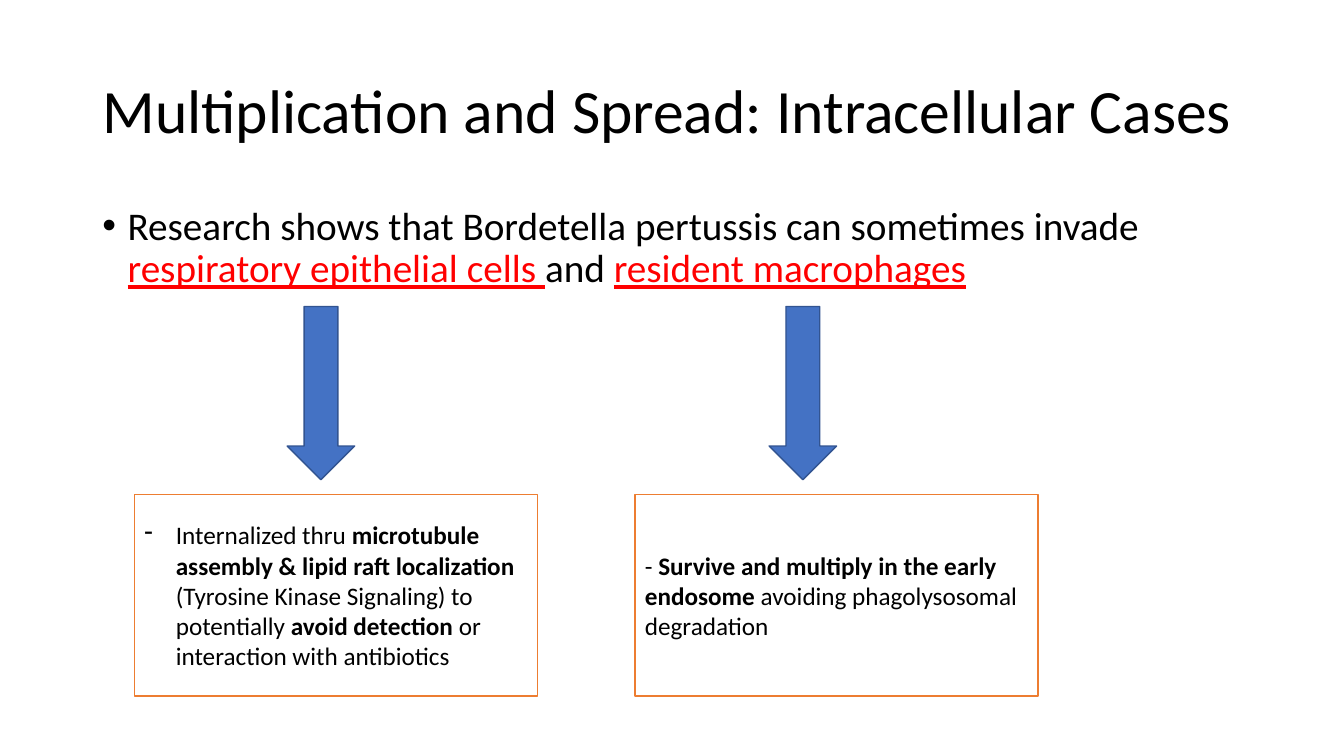
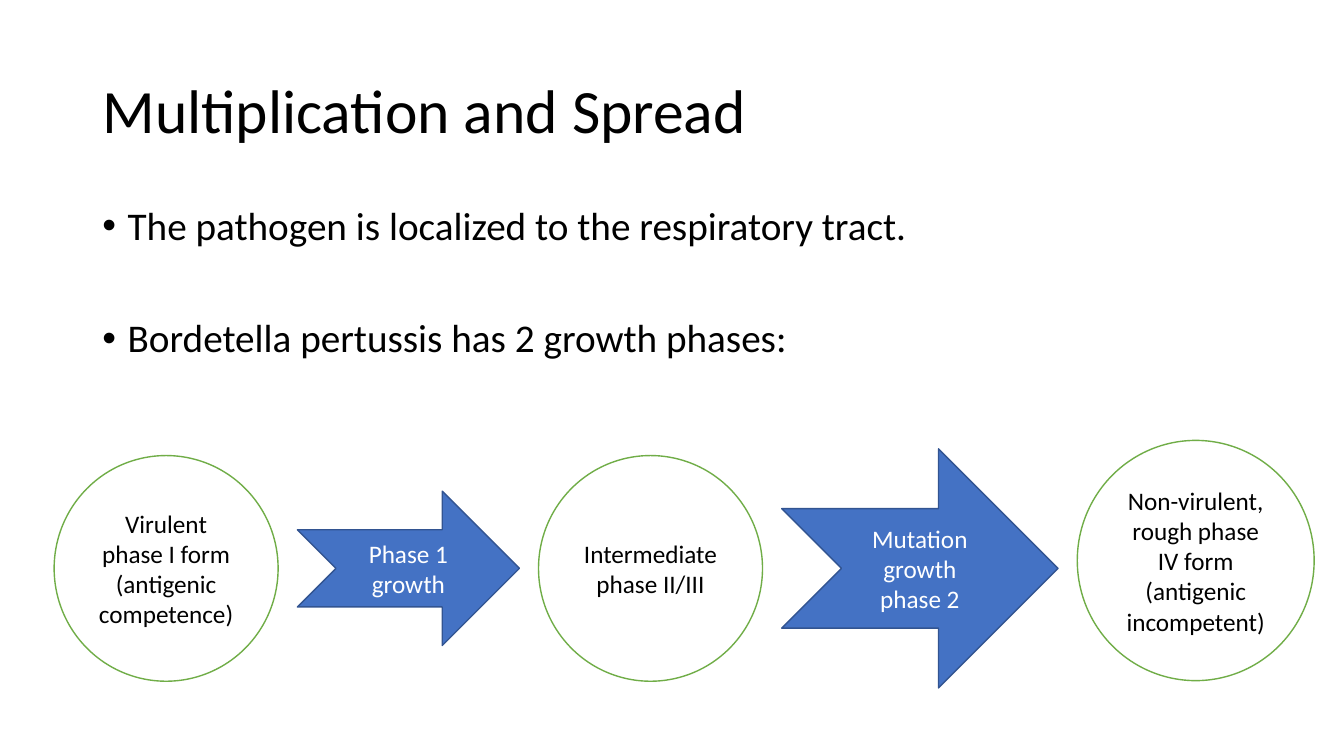
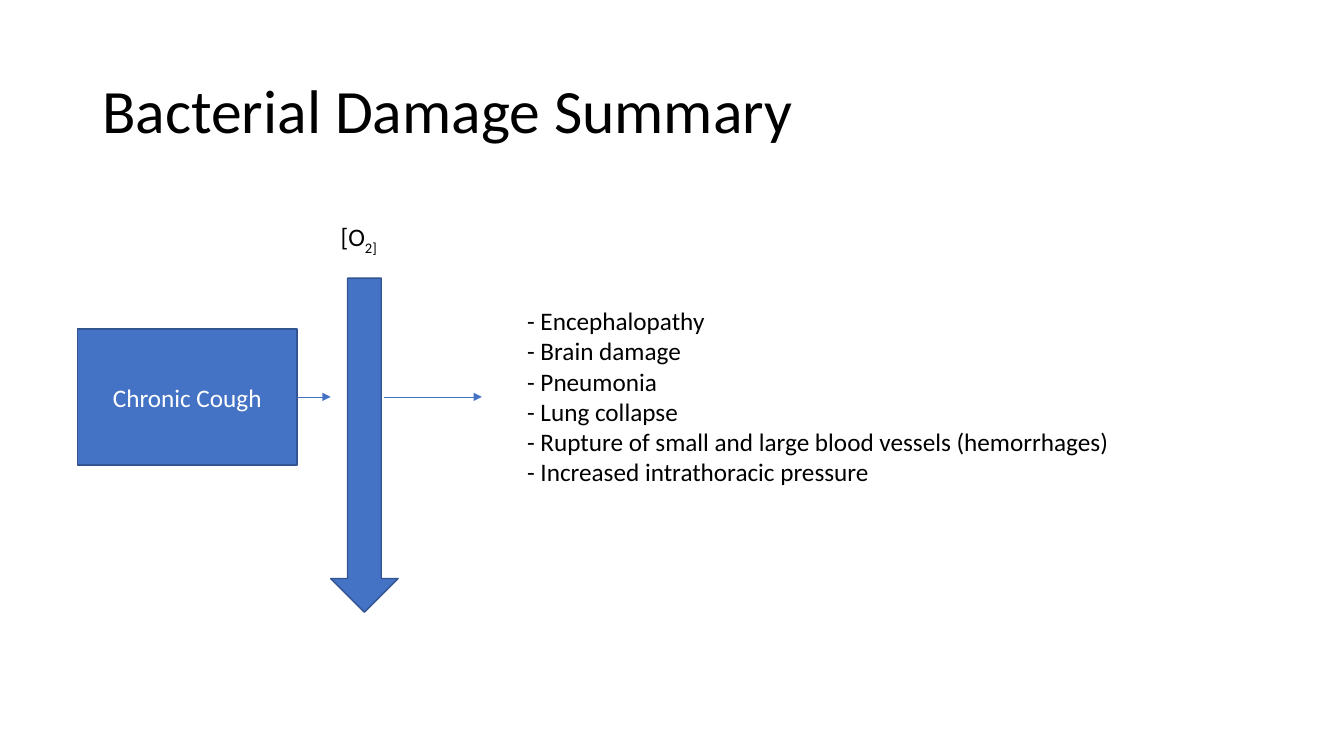
from typing import NamedTuple

from lxml import etree
from pptx import Presentation
from pptx.dml.color import RGBColor
from pptx.enum.shapes import MSO_CONNECTOR, MSO_SHAPE
from pptx.enum.text import MSO_ANCHOR, MSO_AUTO_SIZE, PP_ALIGN
from pptx.oxml.ns import qn
from pptx.util import Pt

RECTANGLE = MSO_SHAPE.RECTANGLE
ELLIPSE = MSO_SHAPE.OVAL
DOWN_ARROW = MSO_SHAPE.DOWN_ARROW
NOTCHED_ARROW = MSO_SHAPE.NOTCHED_RIGHT_ARROW
STRAIGHT = MSO_CONNECTOR.STRAIGHT
LEFT, CENTER = PP_ALIGN.LEFT, PP_ALIGN.CENTER
TOP, MIDDLE = MSO_ANCHOR.TOP, MSO_ANCHOR.MIDDLE
NO_FIT, GROW = MSO_AUTO_SIZE.NONE, MSO_AUTO_SIZE.SHAPE_TO_FIT_TEXT

FONT = "Calibri"
BLACK, WHITE, RED = "000000", "FFFFFF", "FF0000"
BLUE, DARK_BLUE, ORANGE, GREEN = "4472C4", "325491", "ED7D31", "70AD47"
TITLE_CONTENT, TITLE_ONLY = 1, 5
RIGHT_SIDE = 3


class Box(NamedTuple):
    left: float
    top: float
    width: float
    height: float


class Span(NamedTuple):
    text: str
    bold: bool = False
    underline: bool = False
    color: str | None = None
    baseline: int = 0


class Look(NamedTuple):
    fill: str
    line: str
    text: str


class Finding(NamedTuple):
    arrow_left: float
    box_left: float
    spans: list[Span]
    bullet: str | None = None


class Stage(NamedTuple):
    text: str
    kind: MSO_SHAPE
    look: Look
    width: float
    height: float
    middle: float


SOLID = Look(BLUE, DARK_BLUE, WHITE)
ORANGE_OUTLINE = Look(WHITE, ORANGE, BLACK)
GREEN_OUTLINE = Look(WHITE, GREEN, BLACK)
TITLE_BOX = Box(66, 28.8, 828, 104.4)
BODY_BOX = Box(66, 144, 828, 342.7)
ARROW_WIDTH = 48.2


def rgb(color: str) -> RGBColor:
    return RGBColor.from_string(color)


def lengths(box: Box) -> list:
    return [Pt(value) for value in box]


def write_text(frame, paragraphs, *, size=18, color=BLACK, align=LEFT, anchor=TOP,
               fit=NO_FIT, line_spacing=None, space_before=(), bullet=None, indent=0):
    frame.word_wrap = True
    frame.auto_size = fit
    frame.vertical_anchor = anchor
    for index, spans in enumerate(paragraphs):
        paragraph = frame.paragraphs[0] if index == 0 else frame.add_paragraph()
        paragraph.alignment = align
        if line_spacing:
            paragraph.line_spacing = line_spacing
        if space_before:
            paragraph.space_before = Pt(space_before[index])
        if bullet:
            properties = paragraph._p.get_or_add_pPr()
            properties.set("marL", str(Pt(indent)))
            properties.set("indent", str(-Pt(indent)))
            etree.SubElement(properties, qn("a:buChar")).set("char", bullet)
        for span in spans:
            run = paragraph.add_run()
            run.text = span.text
            run.font.name = FONT
            run.font.size = Pt(size)
            run.font.bold = span.bold
            run.font.underline = span.underline
            run.font.color.rgb = rgb(span.color or color)
            if span.baseline:
                run._r.get_or_add_rPr().set("baseline", str(span.baseline * 1000))


def place(placeholder, box: Box) -> None:
    placeholder.left, placeholder.top, placeholder.width, placeholder.height = lengths(box)


def add_slide(deck, layout: int, title: str):
    slide = deck.slides.add_slide(deck.slide_layouts[layout])
    place(slide.shapes.title, TITLE_BOX)
    write_text(slide.shapes.title.text_frame, [[Span(title)]], size=44,
               anchor=MIDDLE, line_spacing=0.9)
    return slide


def add_points(slide, points: list[list[Span]], space_before: list[float]) -> None:
    body = slide.placeholders[1]
    place(body, BODY_BOX)
    write_text(body.text_frame, points, size=28, line_spacing=0.9,
               space_before=space_before, bullet="•", indent=18)


def add_figure(slide, kind: MSO_SHAPE, box: Box, look: Look = SOLID,
               spans: list[Span] | None = None, **text_format):
    figure = slide.shapes.add_shape(kind, *lengths(box))
    figure.shadow.inherit = False
    figure.fill.solid()
    figure.fill.fore_color.rgb = rgb(look.fill)
    figure.line.color.rgb = rgb(look.line)
    figure.line.width = Pt(1)
    if spans:
        write_text(figure.text_frame, [spans], color=look.text, anchor=MIDDLE, **text_format)
    return figure


def add_note(slide, box: Box, paragraphs: list[list[Span]]) -> None:
    note = slide.shapes.add_textbox(*lengths(box))
    write_text(note.text_frame, paragraphs, fit=GROW)


def add_arrow(slide, start: float, end: float, y: float):
    arrow = slide.shapes.add_connector(STRAIGHT, Pt(start), Pt(y), Pt(end), Pt(y))
    arrow.line.color.rgb = rgb(BLUE)
    arrow.line.width = Pt(0.5)
    etree.SubElement(arrow.line._get_or_add_ln(), qn("a:tailEnd")).set("type", "triangle")
    etree.SubElement(arrow._element.spPr, qn("a:effectLst"))
    return arrow


def build_intracellular(deck) -> None:
    slide = add_slide(deck, TITLE_CONTENT, "Multiplication and Spread: Intracellular Cases")
    add_points(slide, [[
        Span("Research shows that Bordetella pertussis can sometimes invade "),
        Span("respiratory epithelial cells ", underline=True, color=RED),
        Span("and "),
        Span("resident macrophages", underline=True, color=RED),
    ]], [10])
    findings = [
        Finding(205.2, 96, [
            Span("Internalized thru "),
            Span("microtubule assembly & lipid raft localization", bold=True),
            Span(" (Tyrosine Kinase Signaling) to potentially "),
            Span("avoid detection ", bold=True),
            Span("or interaction with antibiotics"),
        ], "-"),
        Finding(549.4, 453.6, [
            Span("- "),
            Span("Survive and multiply in the early endosome ", bold=True),
            Span("avoiding phagolysosomal degradation"),
        ]),
    ]
    for finding in findings:
        add_figure(slide, DOWN_ARROW, Box(finding.arrow_left, 218.9, ARROW_WIDTH, 123.8))
        add_figure(slide, RECTANGLE, Box(finding.box_left, 353.2, 288, 144), ORANGE_OUTLINE,
                   finding.spans, bullet=finding.bullet, indent=22.5)


def build_growth_phases(deck) -> None:
    slide = add_slide(deck, TITLE_CONTENT, "Multiplication and Spread")
    add_points(slide, [
        [Span("The pathogen is localized to the respiratory tract.")],
        [Span("Bordetella pertussis has 2 growth phases:")],
    ], [10, 50])
    stages = [
        Stage("Virulent phase I form (antigenic competence)",
              ELLIPSE, GREEN_OUTLINE, 160, 161.2, 406),
        Stage("Phase 1 growth", NOTCHED_ARROW, SOLID, 158.6, 110.2, 406),
        Stage("Intermediate phase II/III", ELLIPSE, GREEN_OUTLINE, 160, 161.2, 406),
        Stage("Mutation growth phase 2", NOTCHED_ARROW, SOLID, 197.4, 170.8, 406),
        Stage("Non-virulent, rough phase IV form (antigenic incompetent)",
              ELLIPSE, GREEN_OUTLINE, 169.2, 171.6, 400.4),
    ]
    left, gap = 38.7, 13.7
    for stage in stages:
        box = Box(left, stage.middle - stage.height / 2, stage.width, stage.height)
        add_figure(slide, stage.kind, box, stage.look, [Span(stage.text)], align=CENTER)
        left += stage.width + gap


def build_damage_summary(deck) -> None:
    slide = add_slide(deck, TITLE_ONLY, "Bacterial Damage Summary")
    cough_box = Box(55.4, 234.9, 156.8, 97.2)
    middle = cough_box.top + cough_box.height / 2
    oxygen_left = 236.2
    cough = add_figure(slide, RECTANGLE, cough_box, SOLID, [Span("Chronic Cough")], align=CENTER)
    add_figure(slide, DOWN_ARROW, Box(oxygen_left, 198.7, ARROW_WIDTH, 238.6))
    add_note(slide, Box(oxygen_left, 154.8, 148.3, 29.1),
             [[Span("[O"), Span("2]", baseline=-25)]])
    cough_arrow = add_arrow(slide, cough_box.left + cough_box.width, oxygen_left, middle)
    cough_arrow.begin_connect(cough, RIGHT_SIDE)
    add_arrow(slide, 274.6, 344.2, middle)
    outcomes = [
        "Encephalopathy",
        "Brain damage",
        "Pneumonia",
        "Lung collapse",
        "Rupture of small and large blood vessels (hemorrhages)",
        "Increased intrathoracic pressure",
    ]
    add_note(slide, Box(369.4, 214.6, 457.2, 159.8),
             [[Span(f"- {outcome}")] for outcome in outcomes])


def main() -> None:
    deck = Presentation()
    deck.slide_width, deck.slide_height = Pt(960), Pt(540)
    build_intracellular(deck)
    build_growth_phases(deck)
    build_damage_summary(deck)
    deck.save("out.pptx")


if __name__ == "__main__":
    main()
